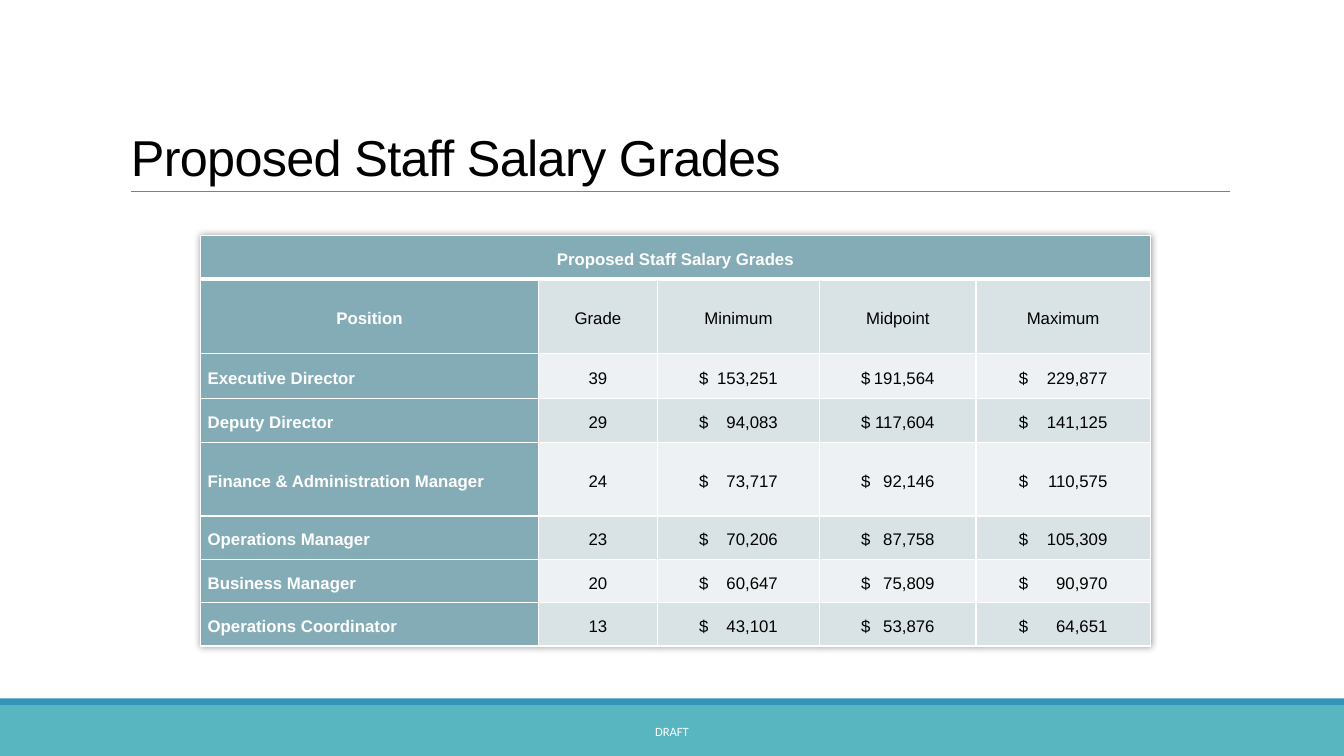
from lxml.etree import SubElement
from pptx import Presentation
from pptx.dml.color import RGBColor
from pptx.enum.shapes import MSO_CONNECTOR as CONN, MSO_SHAPE as SHAPE
from pptx.enum.text import MSO_ANCHOR as ANCHOR, PP_ALIGN as ALIGN
from pptx.oxml import parse_xml
from pptx.oxml.ns import nsdecls, qn
from pptx.util import Inches, Pt

TITLE = "Proposed Staff Salary Grades"
FOOTER = "DRAFT"
HEADERS = ["Position", "Grade", "Minimum", "Midpoint", "Maximum"]
POSITIONS = [
    ("Executive Director", 39, 153251, 191564, 229877),
    ("Deputy Director", 29, 94083, 117604, 141125),
    ("Finance & Administration Manager", 24, 73717, 92146, 110575),
    ("Operations Manager", 23, 70206, 87758, 105309),
    ("Business Manager", 20, 60647, 75809, 90970),
    ("Operations Coordinator", 13, 43101, 53876, 64651),
]
COL_WIDTHS = [3.35, 1.18, 1.61, 1.55, 1.73]
ROW_HEIGHTS = [0.43, 0.74, 0.44, 0.44, 0.73, 0.43, 0.43, 0.43]
AMOUNT_WIDTHS = {2: 0.78, 3: 0.73, 4: 0.88}
COLORS = {
    "white": "FFFFFF", "black": "000000", "rule": "808080",
    "footer": "58B6C0", "stripe": "3494BA",
    "head": "84ACB6", "dark": "D9E3E5", "light": "EDF1F3",
}
BARS = [(7, 0.5, "footer"), (6.93, 0.07, "stripe")]


def rgb(name):
    """Return the named colour."""
    return RGBColor.from_string(COLORS[name])


def write(tf, text, size=12, font="Arial", color="black", bold=False,
          align=ALIGN.LEFT, spacing=1.0, tab=None, track=None):
    """Write one formatted paragraph into a text frame."""
    p = tf.paragraphs[0]
    p.alignment = align
    p.line_spacing = spacing
    if tab:
        tabs = SubElement(p._p.get_or_add_pPr(), qn("a:tabLst"))
        SubElement(tabs, qn("a:tab"), pos=str(Inches(tab)), algn="r")
    r = p.add_run()
    r.text = text
    r.font.size, r.font.name, r.font.bold = Pt(size), font, bold
    r.font.color.rgb = rgb(color)
    if track:
        r._r.get_or_add_rPr().set("spc", str(track))


def add_text(s, box, text, anchor, **fmt):
    """Add a wrapped text box."""
    tf = s.shapes.add_textbox(*map(Inches, box)).text_frame
    tf.word_wrap = True
    tf.vertical_anchor = anchor
    write(tf, text, **fmt)


def add_borders(cell, widths):
    """Give a cell white borders of the widths set for each side."""
    for side, width in widths.items():
        cell._tc.get_or_add_tcPr().append(parse_xml(
            f'<a:{side} {nsdecls("a")} w="{Pt(width)}"><a:solidFill>'
            f'<a:srgbClr val="{COLORS["white"]}"/></a:solidFill></a:{side}>'))


def add_salary_table(s):
    """Add the salary grade table with its soft shadow."""
    rows = [[TITLE] + [""] * 4, HEADERS, *POSITIONS]
    table = s.shapes.add_table(
        len(rows), len(HEADERS), Inches(1.99), Inches(2.34),
        Inches(sum(COL_WIDTHS)), Inches(sum(ROW_HEIGHTS))).table
    for col, width in zip(table.columns, COL_WIDTHS):
        col.width = Inches(width)
    for row, height in zip(table.rows, ROW_HEIGHTS):
        row.height = Inches(height)
    table.cell(0, 0).merge(table.cell(0, len(HEADERS) - 1))
    table._tbl.tblPr.insert(0, parse_xml(
        f'<a:effectLst {nsdecls("a")}><a:outerShdw blurRad="63500" dist="0">'
        '<a:srgbClr val="000000"><a:alpha val="40000"/></a:srgbClr>'
        '</a:outerShdw></a:effectLst>'))
    for i, values in enumerate(rows):
        for j, value in enumerate(values):
            cell = table.cell(i, j)
            head = i == 0 or j == 0
            amount = i > 1 and j in AMOUNT_WIDTHS
            tab = AMOUNT_WIDTHS[j] if amount else None
            left = (COL_WIDTHS[j] - tab) / 2 if amount else 0.07
            cell.margin_left, cell.margin_right = Inches(left), Inches(0.07)
            cell.margin_top = cell.margin_bottom = 0
            cell.vertical_anchor = ANCHOR.MIDDLE
            add_borders(cell, {"lnL": 1, "lnR": 1, "lnT": 3 if i == 1 else 1,
                               "lnB": 3 if i == 0 else 1})
            cell.fill.solid()
            cell.fill.fore_color.rgb = rgb(
                "head" if head else "dark" if i % 2 else "light")
            if value != "":
                centred = i < 2 or j == 1
                write(cell.text_frame, f"$\t{value:,}" if amount else str(value),
                      color="white" if head else "black", bold=head,
                      align=ALIGN.CENTER if centred else ALIGN.LEFT,
                      spacing=1.25, tab=tab)


def main():
    """Build the salary grades slide."""
    prs = Presentation()
    prs.slide_width, prs.slide_height = Inches(13.33), Inches(7.5)
    s = prs.slides.add_slide(prs.slide_layouts[6])
    for top, height, color in BARS:
        sp = s.shapes.add_shape(SHAPE.RECTANGLE, 0, Inches(top),
                                prs.slide_width, Inches(height))
        sp.shadow.inherit = False
        sp.fill.solid()
        sp.fill.fore_color.rgb = rgb(color)
        sp.line.fill.background()
    rule = s.shapes.add_connector(CONN.STRAIGHT, Inches(1.3), Inches(1.9),
                                  Inches(12.2), Inches(1.9))
    rule.line.color.rgb = rgb("rule")
    rule.line.width = Pt(0.5)
    SubElement(rule._element.spPr, qn("a:effectLst"))
    add_text(s, (1.2, 0.31, 11, 1.59), TITLE, ANCHOR.BOTTOM,
             size=36, spacing=0.85, track=-50)
    add_salary_table(s)
    add_text(s, (4.03, 7.06, 5.27, 0.4), FOOTER, ANCHOR.MIDDLE, size=9,
             font="Calibri", color="white", align=ALIGN.CENTER)
    prs.save("out.pptx")


if __name__ == "__main__":
    main()
